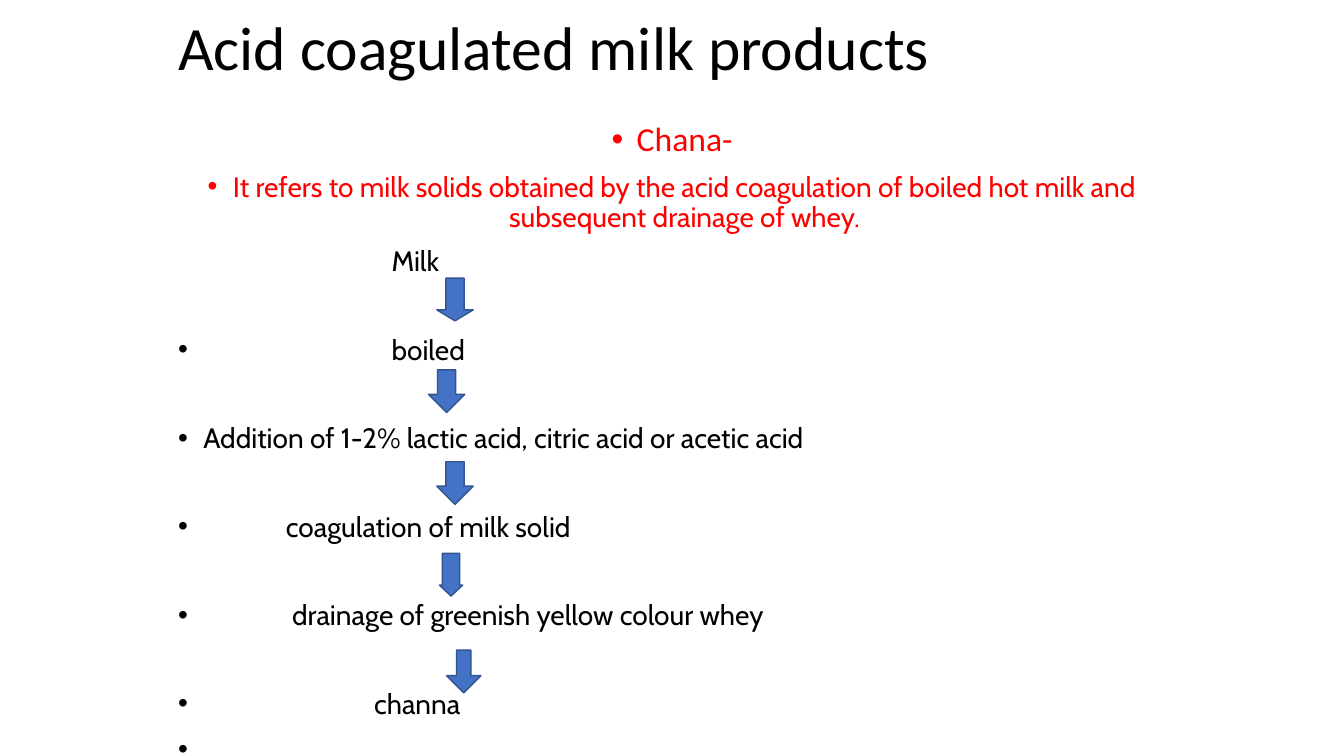
"""Build a slide on acid coagulated milk products with its flow of steps."""
from dataclasses import dataclass

from lxml.etree import SubElement
from pptx import Presentation
from pptx.dml.color import RGBColor as RGB
from pptx.enum.shapes import MSO_SHAPE as Shape
from pptx.enum.text import MSO_ANCHOR as Anchor, MSO_AUTO_SIZE as Fit, PP_ALIGN as Align
from pptx.oxml.ns import qn
from pptx.util import Pt

BLACK, RED, BLUE, NAVY = "000000", "FF0000", "4472C4", "325491"


@dataclass
class Line:
    text: str
    left: float = 18
    gap: float = 41.6
    color: str = BLACK
    font: str = "Cabin"
    size: float = 20
    align: Align = Align.LEFT
    mark: bool = True


@dataclass
class Arrow:
    left: float
    top: float
    width: float
    shaft: float = 0.5
    head: float = 0.5


LINES = [
    Line("Chana-", gap=0, color=RED, font="Calibri", size=24, align=Align.CENTER),
    Line("It refers to milk solids obtained by the acid coagulation of boiled hot milk "
         "and subsequent drainage of whey.", gap=10, color=RED, align=Align.CENTER),
    Line("Milk", left=152.5, gap=10, mark=False),
    Line("boiled", left=152.5),
    Line("Addition of 1-2% lactic acid, citric acid or acetic acid"),
    Line("coagulation of milk solid", left=77),
    Line("drainage of greenish yellow colour whey", left=81.5),
    Line("channa", left=140),
    Line("•", left=0, gap=10, font="Arial", mark=False),
]

ARROWS = [
    Arrow(312, 198.7, 26, head=0.3),
    Arrow(306, 264.2, 26),
    Arrow(312, 329.8, 26),
    Arrow(313.9, 395.3, 16.6, 0.75, 0.47),
    Arrow(319, 464.4, 24.5, 0.42),
]


def paint(part, color: str) -> None:
    """Give a fill or a font a solid colour."""
    if hasattr(part, "solid"):
        part.solid()
        part.fore_color.rgb = RGB.from_string(color)
    else:
        part.color.rgb = RGB.from_string(color)


def place(box, left: float, top: float, width: float, height: float) -> None:
    """Move a placeholder and turn off its fitting."""
    box.left, box.top, box.width, box.height = map(Pt, (left, top, width, height))
    box.text_frame.auto_size = Fit.NONE
    box.text_frame.word_wrap = True


def write(para, line: Line) -> None:
    """Fill one paragraph with a line of text."""
    para.text = line.text
    props = para._p.get_or_add_pPr()
    props.set("marL", str(Pt(line.left)))
    props.set("indent", str(-Pt(line.left) if line.mark else 0))
    if line.mark:
        SubElement(props, qn("a:buFont"), typeface="Arial")
        SubElement(props, qn("a:buChar"), char="•")
    else:
        SubElement(props, qn("a:buNone"))
    para.alignment = line.align
    para.line_spacing = 0.9
    para.space_before = Pt(line.gap)
    para.font.name = line.font
    para.font.size = Pt(line.size)
    paint(para.font, line.color)


def draw(slide, arrow: Arrow) -> None:
    """Draw one block arrow pointing down."""
    shape = slide.shapes.add_shape(
        Shape.DOWN_ARROW, Pt(arrow.left), Pt(arrow.top), Pt(arrow.width), Pt(30.5))
    shape.adjustments[0] = arrow.shaft
    shape.adjustments[1] = arrow.head
    shape.shadow.inherit = False
    paint(shape.fill, BLUE)
    paint(shape.line, NAVY)
    shape.line.width = Pt(1)


def main() -> None:
    """Build and save the slide."""
    deck = Presentation()
    deck.slide_width, deck.slide_height = Pt(960), Pt(540)
    slide = deck.slides.add_slide(deck.slide_layouts[1])
    title, body = slide.placeholders

    place(title, 120, 0, 720, 72)
    title.text_frame.vertical_anchor = Anchor.MIDDLE
    write(title.text_frame.paragraphs[0],
          Line("Acid coagulated milk products", left=0, gap=0,
               font="Calibri", size=44, mark=False))

    place(body, 120, 84, 720, 456)
    frame = body.text_frame
    for i, line in enumerate(LINES):
        write(frame.add_paragraph() if i else frame.paragraphs[0], line)

    for arrow in ARROWS:
        draw(slide, arrow)
    deck.save("out.pptx")


if __name__ == "__main__":
    main()
